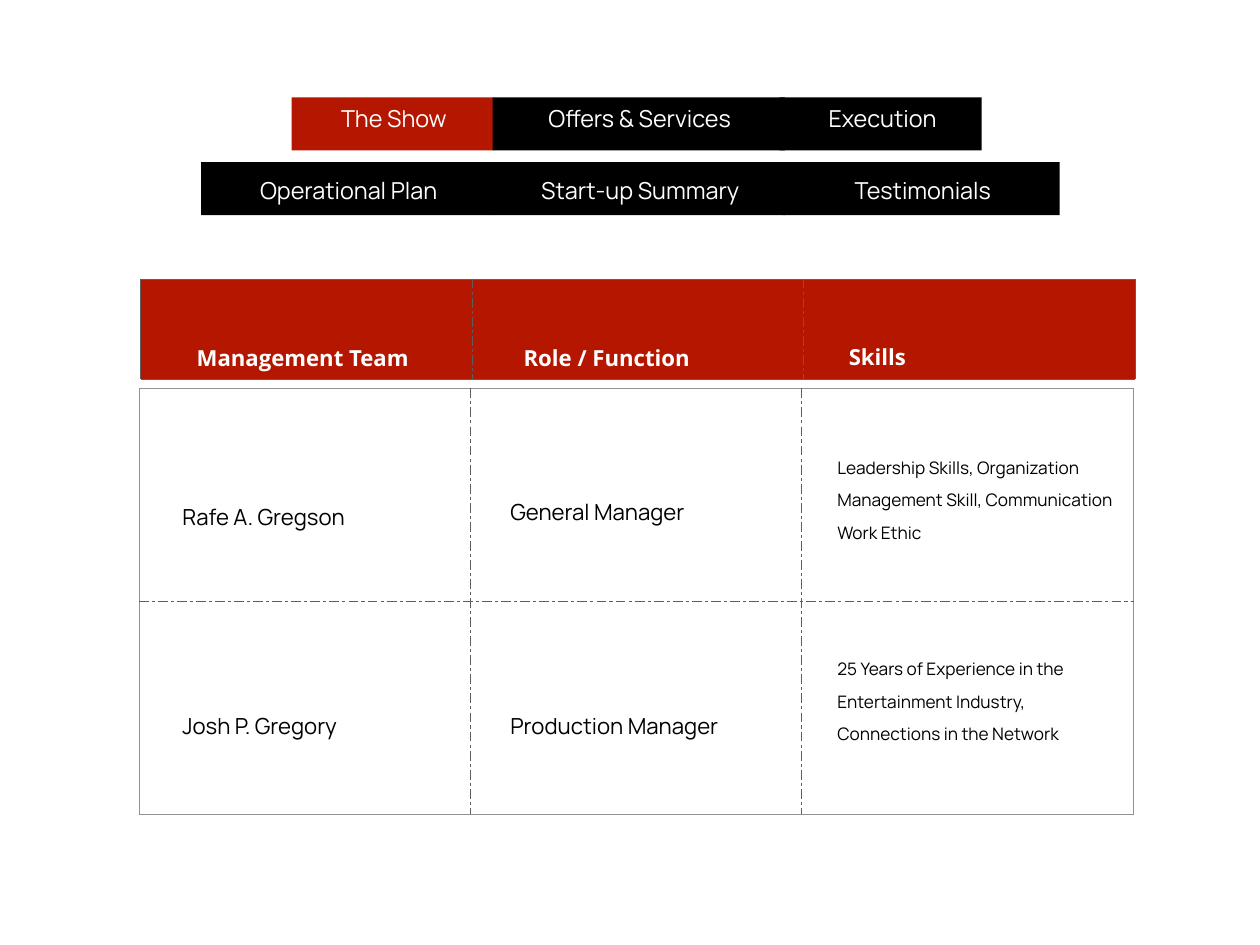
from lxml import etree
from pptx import Presentation
from pptx.dml.color import RGBColor
from pptx.enum.shapes import MSO_SHAPE
from pptx.enum.text import MSO_ANCHOR, PP_ALIGN
from pptx.oxml.ns import qn
from pptx.util import Inches, Pt

RED = RGBColor(0xB4, 0x16, 0x00)
BLACK = RGBColor(0, 0, 0)
WHITE = RGBColor(0xFF, 0xFF, 0xFF)
LIGHT_GRAY = RGBColor(0x92, 0x92, 0x92)
MID_GRAY = RGBColor(0x60, 0x60, 0x60)
DARK_GRAY = RGBColor(0x5D, 0x5D, 0x5D)

prs = Presentation()
prs.slide_width, prs.slide_height = Inches(14.22), Inches(10.67)
slide = prs.slides.add_slide(prs.slide_layouts[6])


def add_text(text, left, top, width, height, size=18, font="Manrope", color=BLACK,
             bold=False, align=PP_ALIGN.LEFT, anchor=MSO_ANCHOR.TOP, spacing=None):
    box = slide.shapes.add_textbox(Inches(left), Inches(top), Inches(width), Inches(height))
    tf = box.text_frame
    tf.word_wrap = True
    tf.vertical_anchor = anchor
    tf.margin_left = tf.margin_right = tf.margin_top = tf.margin_bottom = Inches(0.03)
    tf.text = text
    for p in tf.paragraphs:
        p.alignment = align
        p.line_spacing = spacing
        f = p.runs[0].font
        f.name, f.size, f.bold, f.color.rgb = font, Pt(size), bold, color


def add_grid(left, top, rows, row_height, fill, side_color, edge_color):
    """Add an empty three-column table, solid outside and dash-dotted inside."""
    cols, col_width = 3, 3.74
    frame = slide.shapes.add_table(rows, cols, Inches(left), Inches(top),
                                   Inches(cols * col_width), Inches(rows * row_height))
    table = frame.table
    table.first_row = table.horz_banding = False
    for row in range(rows):
        for col in range(cols):
            cell = table.cell(row, col)
            cell.fill.solid()
            cell.fill.fore_color.rgb = fill
            sides = [("a:lnL", col == 0, side_color), ("a:lnR", col == cols - 1, side_color),
                     ("a:lnT", row == 0, edge_color), ("a:lnB", row == rows - 1, edge_color)]
            for i, (tag, outer, color) in enumerate(sides):
                ln = etree.Element(qn(tag), w=str(Pt(0.75)))
                solid = etree.SubElement(ln, qn("a:solidFill"))
                etree.SubElement(solid, qn("a:srgbClr"), val=str(color if outer else DARK_GRAY))
                etree.SubElement(ln, qn("a:prstDash"), val="solid" if outer else "dashDot")
                cell._tc.tcPr.insert(i, ln)


# Navigation: bar top, label top, then label, bar left and width, label left and width
nav_rows = [
    (1.1, 1.04, [("The Show", 3.29, 2.28, 3.64, 1.61),
                 ("Offers & Services", 5.56, 3.3, 5.8, 2.84),
                 ("Execution", 8.8, 2.28, 9.1, 1.72)]),
    (1.83, 1.85, [("Operational Plan", 2.27, 3.3, 2.61, 2.65),
                  ("Start-up Summary", 5.56, 3.3, 5.9, 2.65),
                  ("Testimonials", 8.84, 3.12, 9.09, 2.65)]),
]
for bar_top, label_top, tabs in nav_rows:
    for label, bar_left, bar_width, label_left, label_width in tabs:
        sp = slide.shapes.add_shape(MSO_SHAPE.RECTANGLE, Inches(bar_left), Inches(bar_top),
                                    Inches(bar_width), Inches(0.6))
        sp.shadow.inherit = False
        sp.fill.solid()
        sp.fill.fore_color.rgb = RED if label == "The Show" else BLACK
        sp.line.fill.background()
    for label, bar_left, bar_width, label_left, label_width in tabs:
        add_text(label, label_left, label_top, label_width, 0.59, size=19, color=WHITE,
                 align=PP_ALIGN.CENTER, anchor=MSO_ANCHOR.MIDDLE)

# Team table
add_grid(1.57, 4.39, 2, 2.4, WHITE, LIGHT_GRAY, LIGHT_GRAY)
add_grid(1.59, 3.15, 1, 1.13, RED, DARK_GRAY, MID_GRAY)

for heading, left, top in [("Management Team", 2.19, 3.43),
                           ("Role / Function", 5.88, 3.43),
                           ("Skills", 9.55, 3.42)]:
    add_text(heading, left, top, 2.83, 0.47, font="Open Sans", color=WHITE,
             bold=True, spacing=2.44)

team = [
    ("Rafe A. Gregson", 5.22, "General Manager", 5.17,
     "Leadership Skills, Organization Management Skill, Communication\nWork Ethic", 4.26),
    ("Josh P. Gregory", 7.58, "Production Manager", 7.58,
     "25 Years of Experience in the Entertainment Industry, Connections in the Network", 6.53),
]
for name, name_top, role, role_top, skills, skills_top in team:
    add_text(name, 2.03, name_top, 2.83, 0.47, spacing=2.44)
    add_text(role, 5.73, role_top, 2.92, 0.47, spacing=2.44)
    add_text(skills, 9.42, skills_top, 3.18, 2.64, size=14,
             anchor=MSO_ANCHOR.MIDDLE, spacing=1.57)

prs.save("out.pptx")
